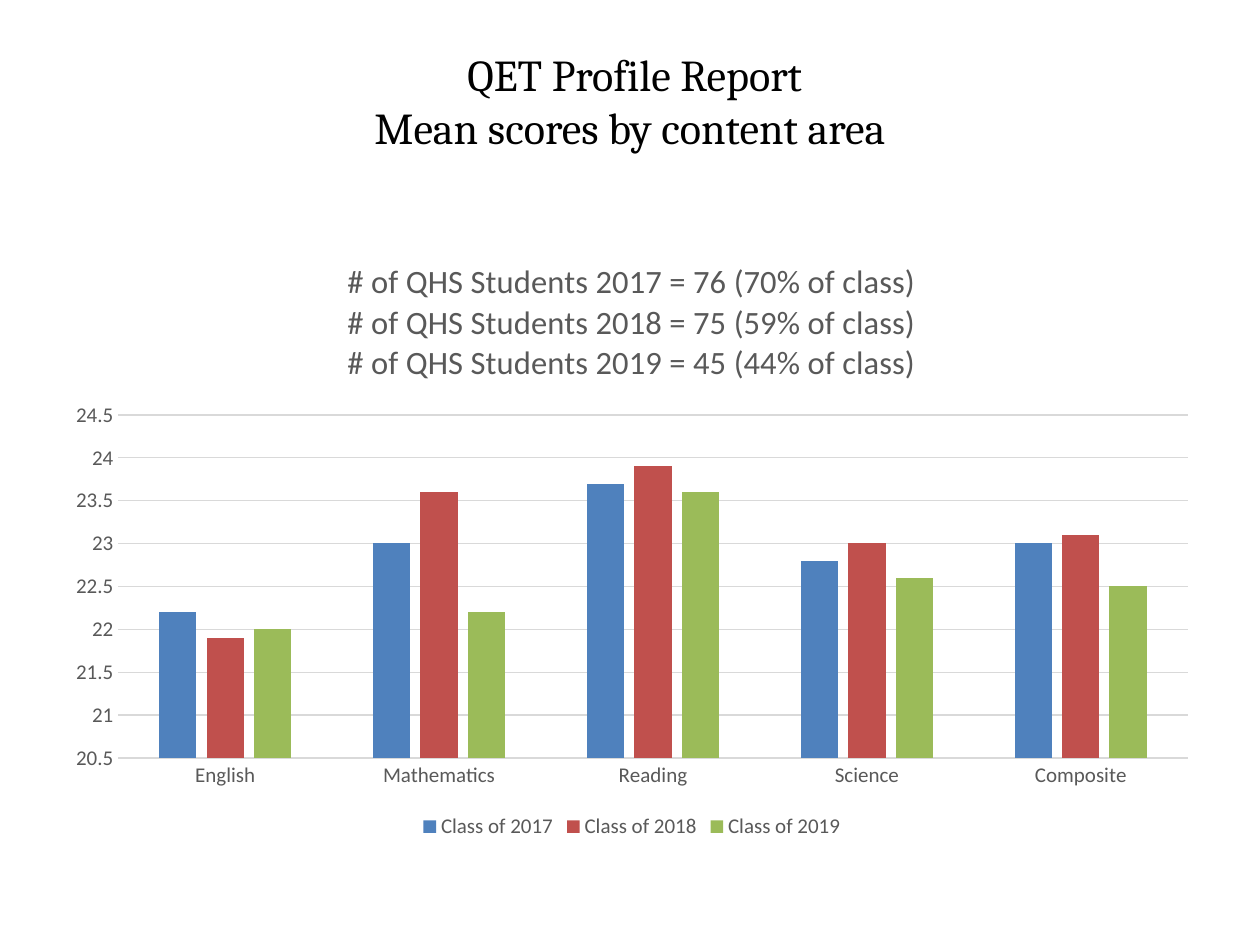
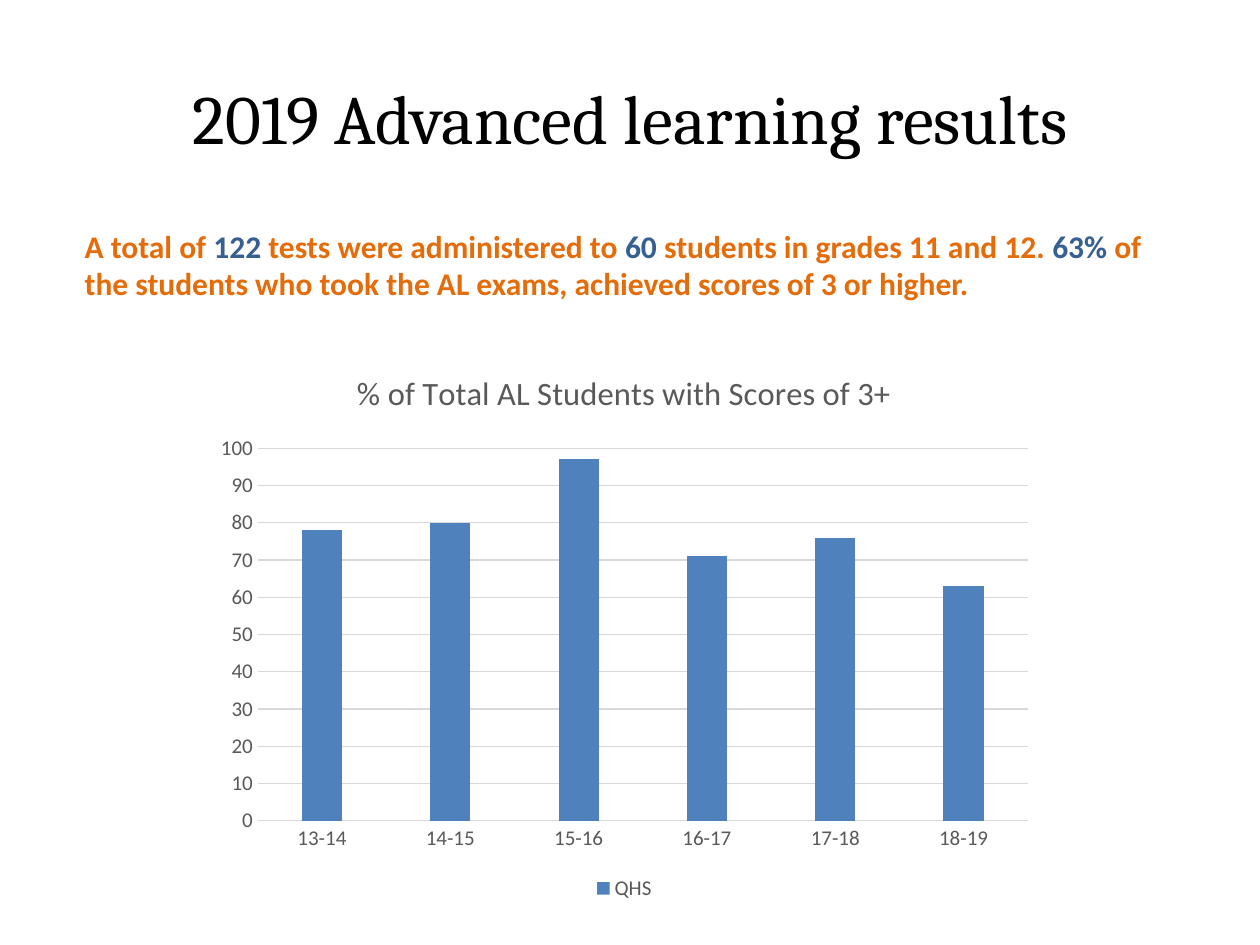
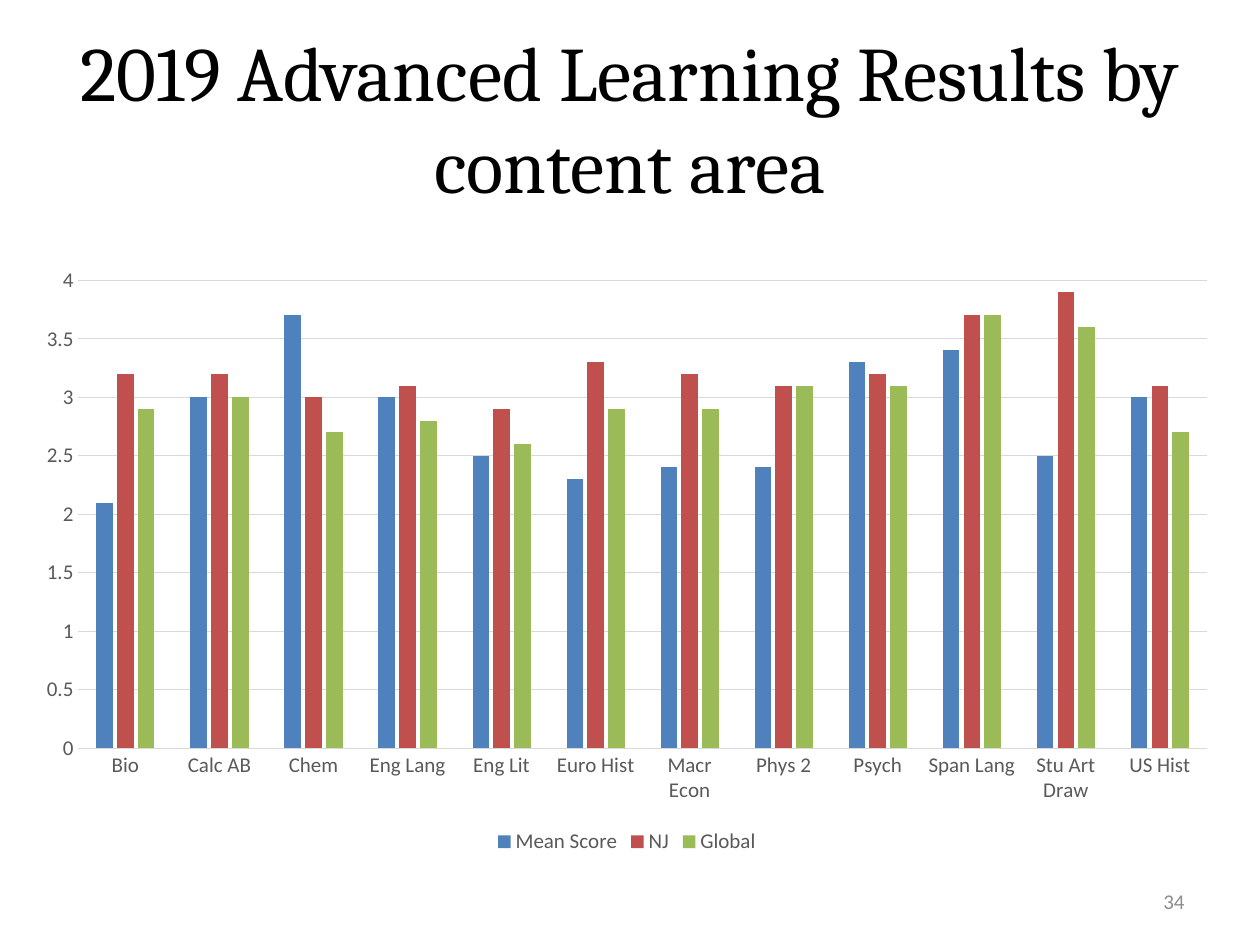
from dataclasses import dataclass

from pptx import Presentation
from pptx.chart.chart import Chart
from pptx.chart.data import CategoryChartData
from pptx.dml.color import RGBColor
from pptx.enum.chart import XL_CHART_TYPE, XL_LEGEND_POSITION, XL_TICK_MARK
from pptx.enum.text import MSO_ANCHOR, PP_ALIGN
from pptx.slide import Slide
from pptx.text.text import Font
from pptx.util import Pt


@dataclass(frozen=True)
class Theme:
    heading_font: str = "Cambria"
    body_font: str = "Calibri"
    black: str = "000000"
    label: str = "595959"
    grid: str = "D9D9D9"
    page_number: str = "8C8C8C"
    orange: str = "E46C0A"
    navy: str = "376092"
    series: tuple[str, ...] = ("4F81BD", "C0504D", "9BBB59")
    two_line_title_size: float = 25.2
    one_line_title_size: float = 39.6
    large_title_size: float = 44
    body_size: float = 18
    chart_title_size: float = 18.6
    label_size: float = 12
    chart_size: float = 10
    line_width: float = 0.75


THEME = Theme()


@dataclass(frozen=True)
class Area:
    left: float
    top: float
    width: float
    height: float

    def lengths(self) -> tuple[Pt, Pt, Pt, Pt]:
        return Pt(self.left), Pt(self.top), Pt(self.width), Pt(self.height)


TITLE_AREA = Area(36, 21.6, 648, 90)
SUMMARY_AREA = Area(32.4, 126, 648, 344)
PAGE_NUMBER_AREA = Area(516.25, 500.4, 167.75, 28.8)


@dataclass(frozen=True)
class Span:
    text: str
    color: str
    size: float
    font: str = THEME.body_font
    bold: bool = False


@dataclass(frozen=True)
class ColumnChart:
    area: Area
    categories: tuple[str, ...]
    series: dict[str, tuple[float, ...]]
    minimum: float
    maximum: float
    step: float
    title: tuple[str, ...] = ()


def style_font(font: Font, name: str, size: float, color: str, bold: bool = False) -> None:
    font.name = name
    font.size = Pt(size)
    font.bold = bold
    font.color.rgb = RGBColor.from_string(color)


def add_text(
    page: Slide,
    area: Area,
    lines: list[list[Span]],
    align: PP_ALIGN = PP_ALIGN.LEFT,
    anchor: MSO_ANCHOR = MSO_ANCHOR.MIDDLE,
    left_inset: float = 7.2,
    bottom_inset: float = 3.6,
) -> None:
    box = page.shapes.add_textbox(*area.lengths())
    frame = box.text_frame
    frame.word_wrap = True
    frame.vertical_anchor = anchor
    frame.margin_left = Pt(left_inset)
    frame.margin_bottom = Pt(bottom_inset)
    para = frame.paragraphs[0]
    para.alignment = align
    for index, line in enumerate(lines):
        if index:
            para.add_line_break()
        for span in line:
            run = para.add_run()
            run.text = span.text
            style_font(run.font, span.font, span.size, span.color, span.bold)


def add_title(page: Slide, lines: list[str], size: float, bottom_inset: float = 3.6) -> None:
    spans = [[Span(line, THEME.black, size, THEME.heading_font)] for line in lines]
    add_text(page, TITLE_AREA, spans, PP_ALIGN.CENTER, bottom_inset=bottom_inset)


def style_labels(font: Font) -> None:
    style_font(font, THEME.body_font, THEME.label_size, THEME.label)


def style_axes(chart: Chart, content: ColumnChart) -> None:
    value_axis, category_axis = chart.value_axis, chart.category_axis
    for axis in (value_axis, category_axis):
        axis.major_tick_mark = XL_TICK_MARK.NONE
        axis.minor_tick_mark = XL_TICK_MARK.NONE
        style_labels(axis.tick_labels.font)
    value_axis.minimum_scale = content.minimum
    value_axis.maximum_scale = content.maximum
    value_axis.major_unit = content.step
    value_axis.format.line.fill.background()
    value_axis.has_major_gridlines = True
    for line in (category_axis.format.line, value_axis.major_gridlines.format.line):
        line.color.rgb = RGBColor.from_string(THEME.grid)
        line.width = Pt(THEME.line_width)


def add_column_chart(page: Slide, content: ColumnChart) -> None:
    data = CategoryChartData()
    data.categories = content.categories
    for name, values in content.series.items():
        data.add_series(name, values)
    chart = page.shapes.add_chart(
        XL_CHART_TYPE.COLUMN_CLUSTERED, *content.area.lengths(), data
    ).chart
    style_font(chart.font, THEME.body_font, THEME.chart_size, THEME.black)
    style_axes(chart, content)

    chart.has_title = bool(content.title)
    if content.title:
        frame = chart.chart_title.text_frame
        for index, line in enumerate(content.title):
            para = frame.add_paragraph() if index else frame.paragraphs[0]
            run = para.add_run()
            run.text = line
            style_font(run.font, THEME.body_font, THEME.chart_title_size, THEME.label)
        chart.chart_title.include_in_layout = False

    chart.has_legend = True
    chart.legend.position = XL_LEGEND_POSITION.BOTTOM
    chart.legend.include_in_layout = False
    style_labels(chart.legend.font)

    plot = chart.plots[0]
    plot.gap_width = 219
    plot.overlap = -27
    plot.vary_by_categories = False
    for series, color in zip(plot.series, THEME.series):
        series.format.fill.solid()
        series.format.fill.fore_color.rgb = RGBColor.from_string(color)


PROFILE_CHART = ColumnChart(
    area=Area(30.24, 135.36, 661.68, 347.04),
    categories=("English", "Mathematics", "Reading", "Science", "Composite"),
    series={
        "Class of 2017": (22.2, 23, 23.7, 22.8, 23),
        "Class of 2018": (21.9, 23.6, 23.9, 23, 23.1),
        "Class of 2019": (22, 22.2, 23.6, 22.6, 22.5),
    },
    minimum=20.5,
    maximum=24.5,
    step=0.5,
    title=(
        "# of QHS Students 2017 = 76 (70% of class)",
        "# of QHS Students 2018 = 75 (59% of class)",
        "# of QHS Students 2019 = 45 (44% of class)",
    ),
)

TREND_CHART = ColumnChart(
    area=Area(116.64, 198, 480.24, 319.68),
    categories=("13-14", "14-15", "15-16", "16-17", "17-18", "18-19"),
    series={"QHS": (78, 80, 97, 71, 76, 63)},
    minimum=0,
    maximum=100,
    step=10,
    title=("% of Total AL Students with Scores of 3+",),
)

SUBJECT_CHART = ColumnChart(
    area=Area(12.96, 146.16, 690.48, 344.88),
    categories=(
        "Bio", "Calc AB", "Chem", "Eng Lang", "Eng Lit", "Euro Hist",
        "Macr Econ", "Phys 2", "Psych", "Span Lang", "Stu Art Draw", "US Hist",
    ),
    series={
        "Mean Score": (2.1, 3, 3.7, 3, 2.5, 2.3, 2.4, 2.4, 3.3, 3.4, 2.5, 3),
        "NJ": (3.2, 3.2, 3, 3.1, 2.9, 3.3, 3.2, 3.1, 3.2, 3.7, 3.9, 3.1),
        "Global": (2.9, 3, 2.7, 2.8, 2.6, 2.9, 2.9, 3.1, 3.1, 3.7, 3.6, 2.7),
    },
    minimum=0,
    maximum=4,
    step=0.5,
)

TREND_SUMMARY = (
    ("A total of ", THEME.orange),
    ("122", THEME.navy),
    (" tests were administered to ", THEME.orange),
    ("60 ", THEME.navy),
    ("students in grades 11 and 12. ", THEME.orange),
    ("63% ", THEME.navy),
    ("of the students who took the AL exams, achieved scores of 3 or higher.", THEME.orange),
)


def build_profile_page(page: Slide) -> None:
    lines = [" QET Profile Report", "Mean scores by content area"]
    add_title(page, lines, THEME.two_line_title_size, 22)
    add_column_chart(page, PROFILE_CHART)


def build_trend_page(page: Slide) -> None:
    add_title(page, ["2019 Advanced learning results"], THEME.one_line_title_size)
    summary = [Span(text, color, THEME.body_size, bold=True) for text, color in TREND_SUMMARY]
    add_text(page, SUMMARY_AREA, [summary], anchor=MSO_ANCHOR.TOP, left_inset=16)
    add_column_chart(page, TREND_CHART)


def build_subject_page(page: Slide) -> None:
    add_column_chart(page, SUBJECT_CHART)
    number = Span("34", THEME.page_number, THEME.label_size)
    add_text(page, PAGE_NUMBER_AREA, [[number]], PP_ALIGN.RIGHT)
    add_title(page, ["2019 Advanced Learning Results by content area"], THEME.large_title_size)


def main() -> None:
    deck = Presentation()
    deck.slide_width, deck.slide_height = Pt(720), Pt(540)
    for build_page in (build_profile_page, build_trend_page, build_subject_page):
        build_page(deck.slides.add_slide(deck.slide_layouts[6]))
    deck.save("out.pptx")


if __name__ == "__main__":
    main()
